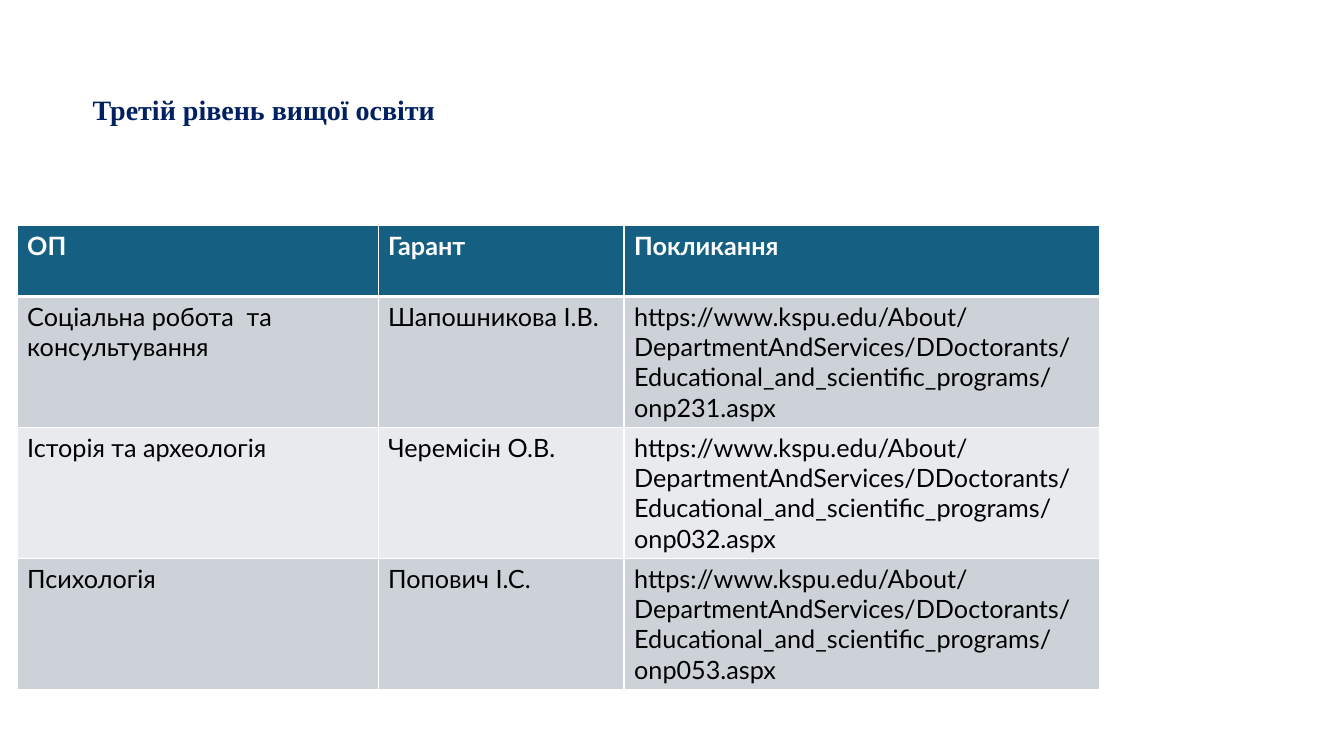
from dataclasses import dataclass

from lxml import etree
from pptx import Presentation
from pptx.dml.color import RGBColor
from pptx.enum.text import MSO_ANCHOR, PP_ALIGN
from pptx.oxml.ns import qn
from pptx.util import Inches, Pt

JUSTIFY = PP_ALIGN.JUSTIFY
TOP = MSO_ANCHOR.TOP

COLORS = {
    "navy": "002060",
    "header": "156082",
    "odd_row": "CCD2D8",
    "even_row": "E8EAED",
    "white": "FFFFFF",
    "black": "000000",
}
TITLE_FORMAT = {"name": "Times New Roman", "size": Pt(20), "bold": True}
HEADER_FORMAT = {"name": "Lato", "size": Pt(18), "bold": True}
BODY_FORMAT = {"name": "Lato", "size": Pt(18), "bold": False}
COLUMN_WIDTHS = (3.58, 2.44, 4.72)
HEADER_HEIGHT = 0.7
PROGRAM_HEIGHT = 1.3
HEADINGS = ("ОП", "Гарант", "Покликання")
LINK_BASE = (
    "https://www.kspu.edu/About/DepartmentAndServices/DDoctorants/"
    "Educational_and_scientific_programs/"
)


@dataclass(frozen=True)
class Program:
    name: str
    guarantor: str
    page: str

    def texts(self) -> tuple[str, ...]:
        return self.name, self.guarantor, LINK_BASE + self.page


@dataclass(frozen=True)
class RowStyle:
    fill: str
    color: str
    font_format: dict
    borders: dict[str, float]


PROGRAMS = (
    Program("Соціальна робота  та консультування", "Шапошникова І.В.", "onp231.aspx"),
    Program("Історія та археологія", "Черемісін О.В.", "onp032.aspx"),
    Program("Психологія", "Попович І.С.", "onp053.aspx"),
)
HEADER_BORDERS = {"lnL": 1, "lnR": 1, "lnT": 1, "lnB": 3}
FIRST_BORDERS = {"lnL": 1, "lnR": 1, "lnT": 3, "lnB": 1}
BODY_BORDERS = {"lnL": 1, "lnR": 1, "lnT": 1, "lnB": 1}


def format_font(font, font_format: dict, color: str) -> None:
    for attribute, value in font_format.items():
        setattr(font, attribute, value)
    font.color.rgb = RGBColor.from_string(COLORS[color])


def add_borders(cell, borders: dict[str, float]) -> None:
    properties = cell._tc.get_or_add_tcPr()
    for side, width in borders.items():
        line = etree.SubElement(properties, qn(f"a:{side}"), w=str(Pt(width)))
        fill = etree.SubElement(line, qn("a:solidFill"))
        etree.SubElement(fill, qn("a:srgbClr"), val=COLORS["white"])


def fill_row(table, row: int, texts: tuple[str, ...], style: RowStyle) -> None:
    for column, text in enumerate(texts):
        cell = table.cell(row, column)
        cell.text = text
        cell.vertical_anchor = TOP
        add_borders(cell, style.borders)
        cell.fill.solid()
        cell.fill.fore_color.rgb = RGBColor.from_string(COLORS[style.fill])
        run = cell.text_frame.paragraphs[0].runs[0]
        format_font(run.font, style.font_format, style.color)


def add_title(slide) -> None:
    shape = slide.shapes.add_textbox(Inches(0.82), Inches(0.99), Inches(6.73), Inches(0.38))
    shape.text_frame.word_wrap = True
    paragraph = shape.text_frame.paragraphs[0]
    paragraph.alignment = JUSTIFY
    paragraph.line_spacing = Pt(15)
    run = paragraph.add_run()
    run.text = "Третій рівень вищої освіти"
    format_font(run.font, TITLE_FORMAT, "navy")


def add_program_table(slide) -> None:
    height = HEADER_HEIGHT + PROGRAM_HEIGHT * len(PROGRAMS)
    table = slide.shapes.add_table(
        len(PROGRAMS) + 1, len(HEADINGS),
        Inches(0.17), Inches(2.24), Inches(sum(COLUMN_WIDTHS)), Inches(height),
    ).table
    for column, width in zip(table.columns, COLUMN_WIDTHS):
        column.width = Inches(width)
    for index, row in enumerate(table.rows):
        row.height = Inches(PROGRAM_HEIGHT if index else HEADER_HEIGHT)
    fill_row(table, 0, HEADINGS, RowStyle("header", "white", HEADER_FORMAT, HEADER_BORDERS))
    for index, program in enumerate(PROGRAMS, start=1):
        fill = "odd_row" if index % 2 else "even_row"
        borders = FIRST_BORDERS if index == 1 else BODY_BORDERS
        fill_row(table, index, program.texts(), RowStyle(fill, "black", BODY_FORMAT, borders))


def main() -> None:
    presentation = Presentation()
    presentation.slide_width = Inches(13.33)
    presentation.slide_height = Inches(7.5)
    slide = presentation.slides.add_slide(presentation.slide_layouts[6])
    add_program_table(slide)
    add_title(slide)
    presentation.save("out.pptx")


if __name__ == "__main__":
    main()
